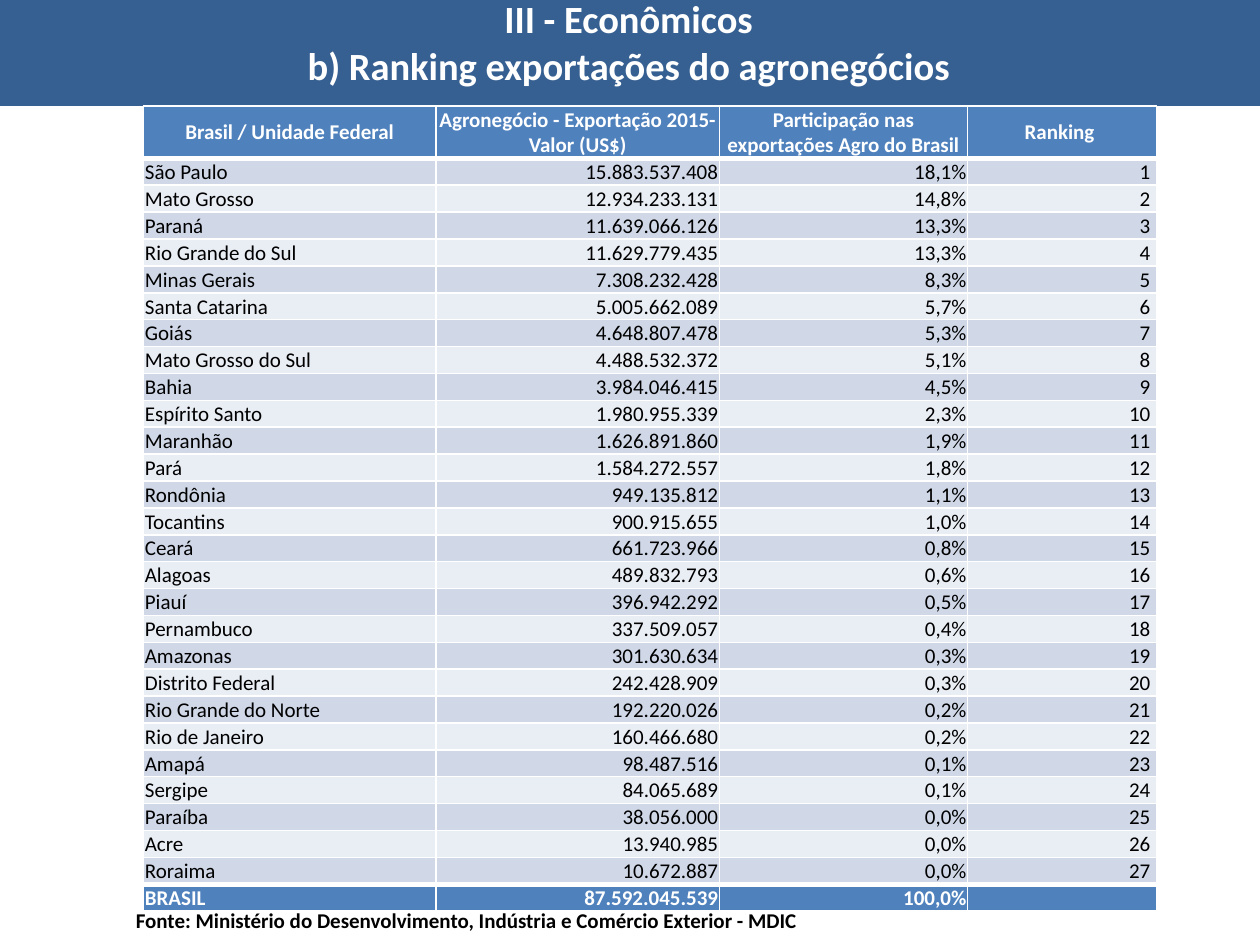
import pptx
import pptx.dml.color
import pptx.enum.shapes
import pptx.enum.text
import pptx.oxml.ns
import pptx.util
from lxml import etree

Inches, Pt = pptx.util.Inches, pptx.util.Pt
ALIGN = pptx.enum.text.PP_ALIGN
MIDDLE = pptx.enum.text.MSO_ANCHOR.MIDDLE
qn = pptx.oxml.ns.qn

# Content
TITLE = ["III - Econômicos", "b) Ranking exportações do agronegócios"]
HEADERS = [
    "Brasil / Unidade Federal",
    "Agronegócio - Exportação 2015-\nValor (US$)",
    "Participação nas exportações Agro do Brasil",
    "Ranking",
]
STATES = [
    ("São Paulo", "15.883.537.408", "18,1%"),
    ("Mato Grosso", "12.934.233.131", "14,8%"),
    ("Paraná", "11.639.066.126", "13,3%"),
    ("Rio Grande do Sul", "11.629.779.435", "13,3%"),
    ("Minas Gerais", "7.308.232.428", "8,3%"),
    ("Santa Catarina", "5.005.662.089", "5,7%"),
    ("Goiás", "4.648.807.478", "5,3%"),
    ("Mato Grosso do Sul", "4.488.532.372", "5,1%"),
    ("Bahia", "3.984.046.415", "4,5%"),
    ("Espírito Santo", "1.980.955.339", "2,3%"),
    ("Maranhão", "1.626.891.860", "1,9%"),
    ("Pará", "1.584.272.557", "1,8%"),
    ("Rondônia", "949.135.812", "1,1%"),
    ("Tocantins", "900.915.655", "1,0%"),
    ("Ceará", "661.723.966", "0,8%"),
    ("Alagoas", "489.832.793", "0,6%"),
    ("Piauí", "396.942.292", "0,5%"),
    ("Pernambuco", "337.509.057", "0,4%"),
    ("Amazonas", "301.630.634", "0,3%"),
    ("Distrito Federal", "242.428.909", "0,3%"),
    ("Rio Grande do Norte", "192.220.026", "0,2%"),
    ("Rio de Janeiro", "160.466.680", "0,2%"),
    ("Amapá", "98.487.516", "0,1%"),
    ("Sergipe", "84.065.689", "0,1%"),
    ("Paraíba", "38.056.000", "0,0%"),
    ("Acre", "13.940.985", "0,0%"),
    ("Roraima", "10.672.887", "0,0%"),
]
TOTAL = ("BRASIL", "87.592.045.539", "100,0%", "")
SOURCE = "Fonte: Ministério do Desenvolvimento, Indústria e Comércio Exterior - MDIC"

COLORS = {"band": "376092", "accent": "4F81BD", "odd": "D0D8E8",
          "even": "E9EDF4", "white": "FFFFFF", "black": "000000"}
FONT = "Calibri"
COLUMN_WIDTHS = [2.32, 2.25, 1.97, 1.5]
HEADER_HEIGHT, ROW_HEIGHT = 0.4, 0.21


def rgb(name):
    return pptx.dml.color.RGBColor.from_string(COLORS[name])


def add_run(paragraph, text, size, color, bold):
    run = paragraph.add_run()
    run.text = text
    run.font.name, run.font.size, run.font.bold = FONT, Pt(size), bold
    run.font.color.rgb = rgb(color)


def set_borders(cell, top, bottom):
    properties = cell._tc.get_or_add_tcPr()
    for side, width in (("L", 1), ("R", 1), ("T", top), ("B", bottom)):
        line = etree.SubElement(properties, qn(f"a:ln{side}"), w=str(Pt(width)))
        fill = etree.SubElement(line, qn("a:solidFill"))
        etree.SubElement(fill, qn("a:srgbClr"), val=COLORS["white"])


def fill_cell(cell, text, align, fill, color, bold):
    cell.fill.solid()
    cell.fill.fore_color.rgb = rgb(fill)
    cell.vertical_anchor = MIDDLE
    cell.margin_left = cell.margin_right = cell.margin_top = Inches(0.01)
    cell.margin_bottom = 0
    for index, line in enumerate(text.split("\n")):
        frame = cell.text_frame
        paragraph = frame.add_paragraph() if index else frame.paragraphs[0]
        paragraph.alignment = align
        if line:
            add_run(paragraph, line, 12, color, bold)
        else:  # keeps the empty cell from stretching its row
            etree.SubElement(paragraph._p, qn("a:endParaRPr"), sz="1200")


presentation = pptx.Presentation()
presentation.slide_width, presentation.slide_height = Inches(10), Inches(7.5)
slide = presentation.slides.add_slide(presentation.slide_layouts[6])

# Title band
band = slide.shapes.add_shape(pptx.enum.shapes.MSO_SHAPE.RECTANGLE,
                              Inches(-0.02), Inches(-0.18), Inches(10.02), Inches(1.02))
band.shadow.inherit = False
band.fill.solid()
band.fill.fore_color.rgb = rgb("band")
band.line.fill.background()
band.text_frame.word_wrap = True
band.text_frame.vertical_anchor = MIDDLE
heading = band.text_frame.paragraphs[0]
heading.alignment = ALIGN.CENTER
for index, line in enumerate(TITLE):
    if index:
        heading.add_line_break()
    add_run(heading, line, 22, "white", True)

# Ranking table
body = [(*state, str(rank)) for rank, state in enumerate(STATES, start=1)]
rows = [HEADERS, *body, TOTAL]
last = len(rows) - 1
table = slide.shapes.add_table(
    len(rows), len(HEADERS), Inches(1.14), Inches(0.84), Inches(sum(COLUMN_WIDTHS)),
    Inches(HEADER_HEIGHT + last * ROW_HEIGHT)).table
for column, width in zip(table.columns, COLUMN_WIDTHS):
    column.width = Inches(width)
for row_index, values in enumerate(rows):
    table.rows[row_index].height = Inches(ROW_HEIGHT if row_index else HEADER_HEIGHT)
    emphasized = row_index in (0, last)
    fill = "accent" if emphasized else "odd" if row_index % 2 else "even"
    top = 3 if row_index in (1, last) else 1
    bottom = 3 if row_index in (0, last - 1) else 1
    for column_index, text in enumerate(values):
        cell = table.cell(row_index, column_index)
        align = (ALIGN.CENTER if row_index == 0
                 else ALIGN.RIGHT if column_index else ALIGN.LEFT)
        set_borders(cell, top, bottom)
        fill_cell(cell, text, align, fill, "white" if emphasized else "black", emphasized)
        if column_index == 3:
            cell.margin_right = Inches(0.05)

# Source line
source = slide.shapes.add_textbox(Inches(0.98), Inches(7.15), Inches(5.97), Inches(0.3))
source.text_frame.word_wrap = True
add_run(source.text_frame.paragraphs[0], SOURCE, 12, "black", True)

presentation.save("out.pptx")
